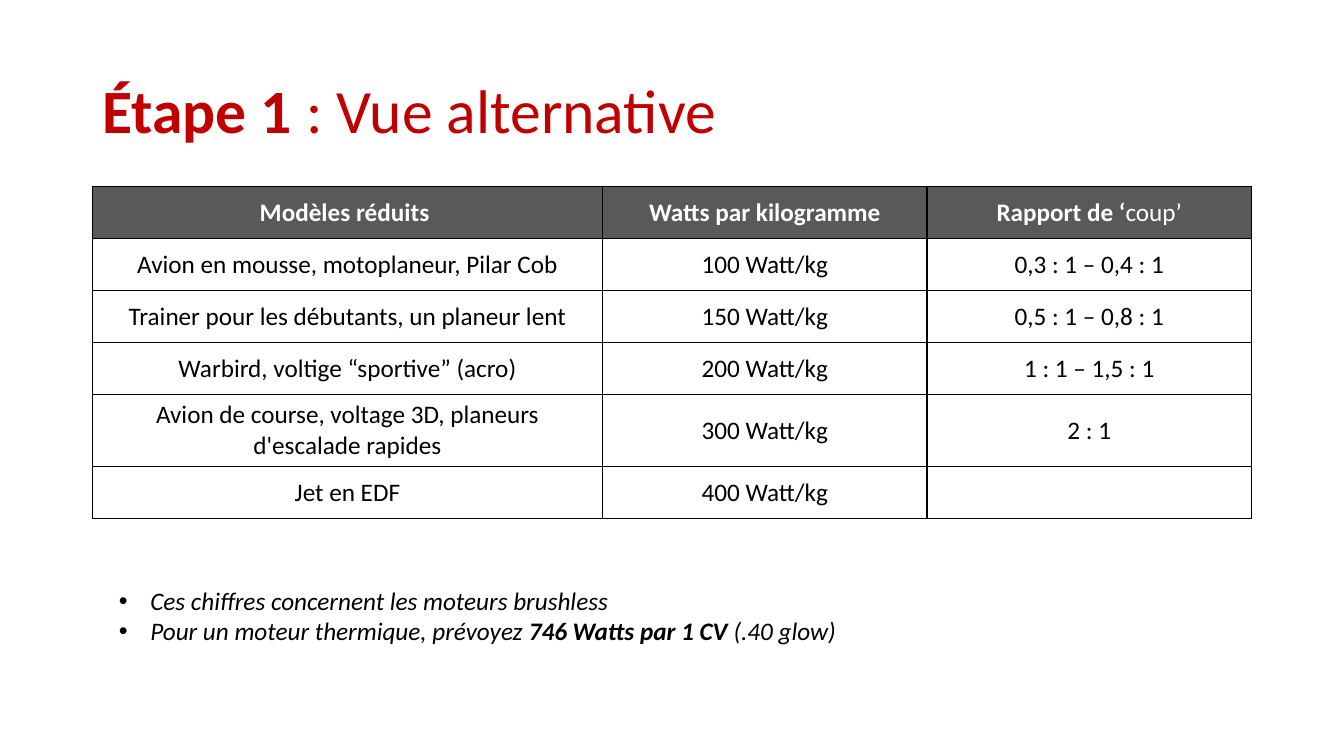
from lxml.etree import SubElement
from pptx import Presentation
from pptx.dml.color import RGBColor
from pptx.enum.text import MSO_ANCHOR as Anchor, MSO_AUTO_SIZE as AutoSize, PP_ALIGN as Align
from pptx.oxml import parse_xml
from pptx.oxml.ns import nsdecls, qn
from pptx.util import Pt

BLACK, WHITE, RED, GREY = "000000", "FFFFFF", "C00000", "595959"


def color(hex_code):
    return RGBColor.from_string(hex_code)


def add_spans(para, spans, size, hex_code, italic=False):
    """Add (text, bold) spans to a paragraph."""
    for text, bold in spans:
        span = para.add_run()
        span.text = text
        font = span.font
        font.name, font.size = "Calibri", Pt(size)
        font.bold, font.italic = bold, italic
        font.color.rgb = color(hex_code)


deck = Presentation()
deck.slide_width, deck.slide_height = Pt(960), Pt(540)
page = deck.slides.add_slide(deck.slide_layouts[5])

# Title
title = page.shapes.title
title.left, title.top, title.width, title.height = Pt(66), Pt(28.8), Pt(828), Pt(104.4)
title.text_frame.vertical_anchor = Anchor.MIDDLE
para = title.text_frame.paragraphs[0]
para.alignment = Align.LEFT
para.line_spacing = 0.9
add_spans(para, [("Étape 1 ", True), (": Vue alternative", False)], 44, RED)

# Power table: the first row is the header
rows = [
    [[("Modèles réduits ", True)], [("Watts par kilogramme", True)],
     [("Rapport de ‘", True), ("coup’", False)]],
]
models = [
    ("Avion en mousse, motoplaneur, Pilar Cob", "100 Watt/kg", "0,3 : 1 – 0,4 : 1"),
    ("Trainer pour les débutants, un planeur lent", "150 Watt/kg", "0,5 : 1 – 0,8 : 1"),
    ("Warbird, voltige “sportive” (acro)", "200 Watt/kg", "1 : 1 – 1,5 : 1"),
    ("Avion de course, voltage 3D, planeurs d'escalade rapides", "300 Watt/kg", "2 : 1"),
    ("Jet en EDF", "400 Watt/kg", ""),
]
rows += [[[(text, False)] if text else [] for text in model] for model in models]
widths = [364.4, 231.8, 231.8]
row_height = 37.2

table = page.shapes.add_table(len(rows), len(widths), Pt(66), Pt(133.2),
                              Pt(sum(widths)), Pt(row_height * len(rows))).table
table.first_row = table.horz_banding = False
for column, width in zip(table.columns, widths):
    column.width = Pt(width)

for row_index, row in enumerate(rows):
    table.rows[row_index].height = Pt(row_height)
    header = row_index == 0
    for column_index, spans in enumerate(row):
        cell = table.cell(row_index, column_index)
        cell.vertical_anchor = Anchor.MIDDLE
        cell.fill.solid()
        cell.fill.fore_color.rgb = color(GREY if header else WHITE)
        para = cell.text_frame.paragraphs[0]
        para.alignment = Align.CENTER
        para.font.size = Pt(18)
        add_spans(para, spans, 18, WHITE if header else BLACK)

        # Borders: thin, with heavier inner vertical lines
        left = 1 if column_index > 0 else 0.5
        right = 1 if column_index < len(widths) - 1 else 0.5
        borders = [("lnL", left), ("lnR", right), ("lnT", 0.5), ("lnB", 0.5)]
        properties = cell._tc.get_or_add_tcPr()
        for position, (side, weight) in enumerate(borders):
            properties.insert(position, parse_xml(
                f'<a:{side} {nsdecls("a")} w="{Pt(weight)}"><a:solidFill>'
                f'<a:srgbClr val="{BLACK}"/></a:solidFill></a:{side}>'))

# Bulleted notes
notes = [
    [("Ces chiffres concernent les moteurs brushless", False)],
    [("Pour un moteur thermique, prévoyez ", False), ("746 Watts par 1 CV ", True),
     ("(.40 glow)", False)],
]
box = page.shapes.add_textbox(Pt(77.8), Pt(414.7), Pt(532.8), Pt(51))
frame = box.text_frame
frame.word_wrap = False
frame.auto_size = AutoSize.SHAPE_TO_FIT_TEXT
for index, spans in enumerate(notes):
    para = frame.add_paragraph() if index else frame.paragraphs[0]
    add_spans(para, spans, 18, BLACK, italic=True)
    properties = para._p.get_or_add_pPr()
    properties.set("marL", str(Pt(22.5)))
    properties.set("indent", str(-Pt(22.5)))
    SubElement(properties, qn("a:buFont"), typeface="Arial")
    SubElement(properties, qn("a:buChar"), char="•")

deck.save("out.pptx")
